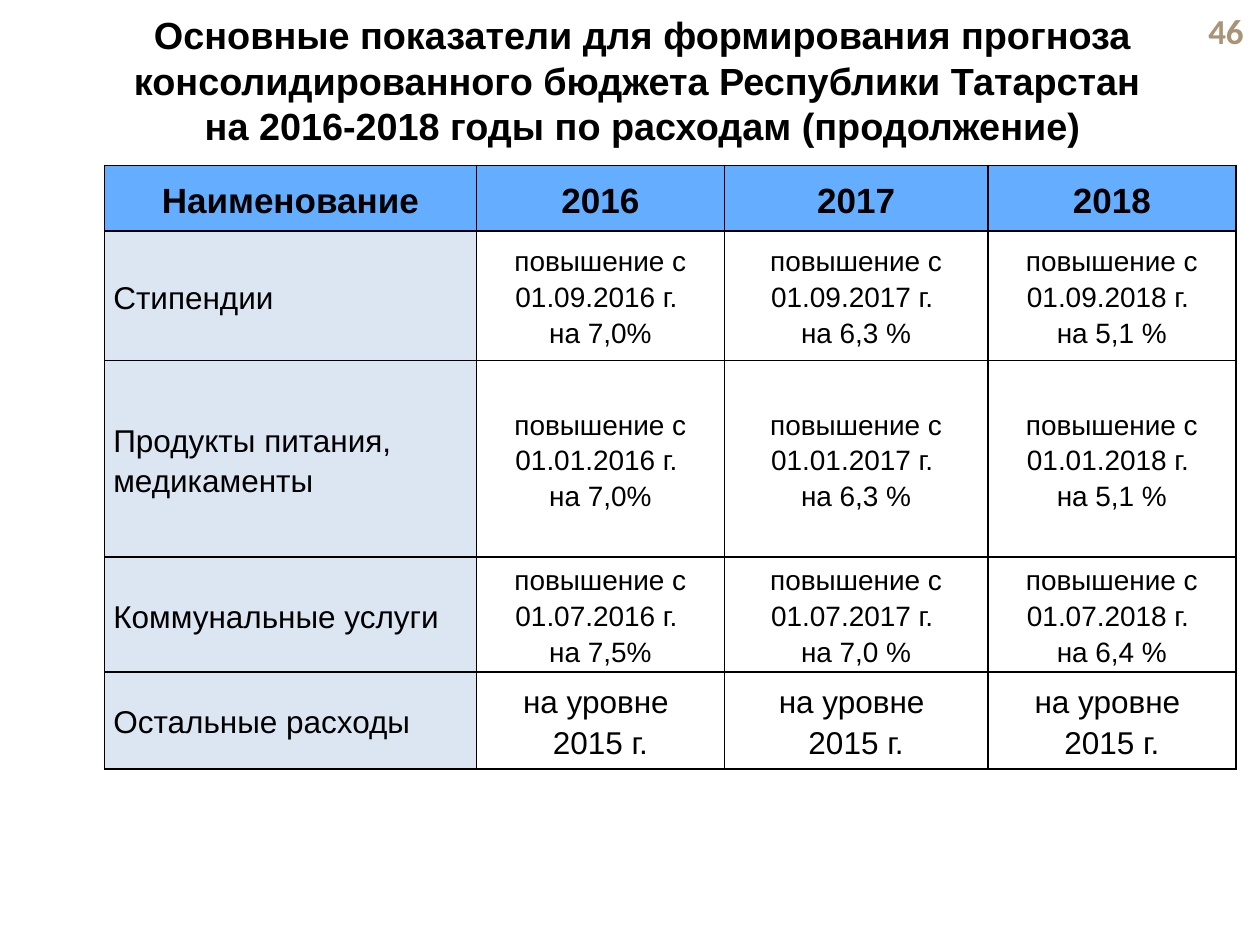
import pptx
import pptx.dml.color
import pptx.enum.text
import pptx.oxml
import pptx.oxml.ns
import pptx.util

RGBColor = pptx.dml.color.RGBColor
ALIGN = pptx.enum.text.PP_ALIGN
ANCHOR = pptx.enum.text.MSO_ANCHOR
Inches = pptx.util.Inches

BLACK = RGBColor(0x00, 0x00, 0x00)
SAND = RGBColor(0xA9, 0x94, 0x77)
HEADER_BLUE = RGBColor(0x65, 0xAE, 0xFF)
NAME_BLUE = RGBColor(0xDC, 0xE6, 0xF2)

WIDTH, HEIGHT = 10, 7.5
YEARS = ("2016", "2017", "2018")
COLUMN_WIDTHS = (2.95, 1.97, 2.09, 1.97)
ROW_HEIGHTS = (0.52, 1.03, 1.56, 0.91, 0.77)
INCREASES = (
    ("Стипендии", "01.09", ("7,0%", "6,3 %", "5,1 %")),
    ("Продукты питания, медикаменты", "01.01", ("7,0%", "6,3 %", "5,1 %")),
    ("Коммунальные услуги", "01.07", ("7,5%", "7,0 %", "6,4 %")),
)


class BudgetSlide:
    font = "Arial"

    def __init__(self, deck):
        self.slide = deck.slides.add_slide(deck.slide_layouts[0])
        subtitle = self.slide.placeholders[1].element
        subtitle.getparent().remove(subtitle)

    def box(self, left, top, width, height):
        return (Inches(left * WIDTH), Inches(top * HEIGHT),
                Inches(width * WIDTH), Inches(height * HEIGHT))

    def add_lines(self, paragraph, lines, size, color=BLACK, bold=False, font=None):
        for index, line in enumerate(lines):
            if index:
                paragraph.add_line_break()
            run = paragraph.add_run()
            run.text = line
            run.font.name = font or self.font
            run.font.size = pptx.util.Pt(size)
            run.font.bold = bold
            run.font.color.rgb = color

    def title(self, lines, area):
        heading = self.slide.shapes.title
        heading.left, heading.top, heading.width, heading.height = self.box(*area)
        frame = heading.text_frame
        frame.auto_size = pptx.enum.text.MSO_AUTO_SIZE.NONE
        frame.word_wrap = True
        frame.vertical_anchor = ANCHOR.TOP
        frame.margin_top = Inches(0.02)
        frame.paragraphs[0].alignment = ALIGN.CENTER
        self.add_lines(frame.paragraphs[0], lines, 21.6, bold=True)

    def page_number(self, number, area):
        frame = self.slide.shapes.add_textbox(*self.box(*area)).text_frame
        frame.word_wrap = True
        frame.vertical_anchor = ANCHOR.MIDDLE
        frame.margin_bottom = 0
        frame.paragraphs[0].alignment = ALIGN.RIGHT
        self.add_lines(frame.paragraphs[0], [number], 20, SAND, True, "Calibri")

    def border(self, cell):
        properties = cell._tc.get_or_add_tcPr()
        for position, side in enumerate(("lnL", "lnR", "lnT", "lnB")):
            properties.insert(position, pptx.oxml.parse_xml(
                f'<a:{side} {pptx.oxml.ns.nsdecls("a")} w="12700">'
                f'<a:solidFill><a:srgbClr val="{BLACK}"/></a:solidFill></a:{side}>'))

    def cell(self, cell, paragraphs, size, align, fill=None, bold=False):
        cell.margin_left = cell.margin_right = Inches(0.07)
        cell.margin_top = cell.margin_bottom = 0
        cell.vertical_anchor = ANCHOR.MIDDLE
        if fill is None:
            cell.fill.background()
        else:
            cell.fill.solid()
            cell.fill.fore_color.rgb = fill
        self.border(cell)
        frame = cell.text_frame
        for index, text in enumerate(paragraphs):
            paragraph = frame.add_paragraph() if index else frame.paragraphs[0]
            paragraph.alignment = align
            paragraph.line_spacing = 1.15
            self.add_lines(paragraph, [text], size, bold=bold)

    def table(self, header, rows, left, top):
        area = self.box(left, top, sum(COLUMN_WIDTHS) / WIDTH, sum(ROW_HEIGHTS) / HEIGHT)
        grid = self.slide.shapes.add_table(len(ROW_HEIGHTS), len(COLUMN_WIDTHS), *area).table
        grid.first_row = grid.horz_banding = False
        for column, width in zip(grid.columns, COLUMN_WIDTHS):
            column.width = Inches(width)
        for row, height in zip(grid.rows, ROW_HEIGHTS):
            row.height = Inches(height)
        for column, label in enumerate(header):
            self.cell(grid.cell(0, column), [label], 20, ALIGN.CENTER, HEADER_BLUE, True)
        for row, (name, size, values) in enumerate(rows, 1):
            name_align = ALIGN.LEFT if "," in name else ALIGN.JUSTIFY
            self.cell(grid.cell(row, 0), [name], 18, name_align, NAME_BLUE)
            for column, value in enumerate(values, 1):
                self.cell(grid.cell(row, column), value, size, ALIGN.CENTER)


def main():
    deck = pptx.Presentation()
    deck.slide_width, deck.slide_height = Inches(WIDTH), Inches(HEIGHT)
    page = BudgetSlide(deck)
    page.title(
        ["Основные показатели для формирования прогноза "
         "консолидированного бюджета Республики Татарстан ",
         "на 2016-2018 годы по расходам (продолжение)"],
        (0.08, 0.01, 0.86, 0.2))
    rows = [
        (name, 16, [(f"повышение с {day}.{year} г. ", f"на {rate}")
                    for year, rate in zip(YEARS, rates)])
        for name, day, rates in INCREASES
    ]
    rows.append(("Остальные расходы ", 18, [("на уровне ", "2015 г.")] * len(YEARS)))
    page.table(("Наименование", *YEARS), rows, 0.083, 0.175)
    page.page_number("46", (0.933, 0.0067, 0.064, 0.045))
    deck.save("out.pptx")


if __name__ == "__main__":
    main()
